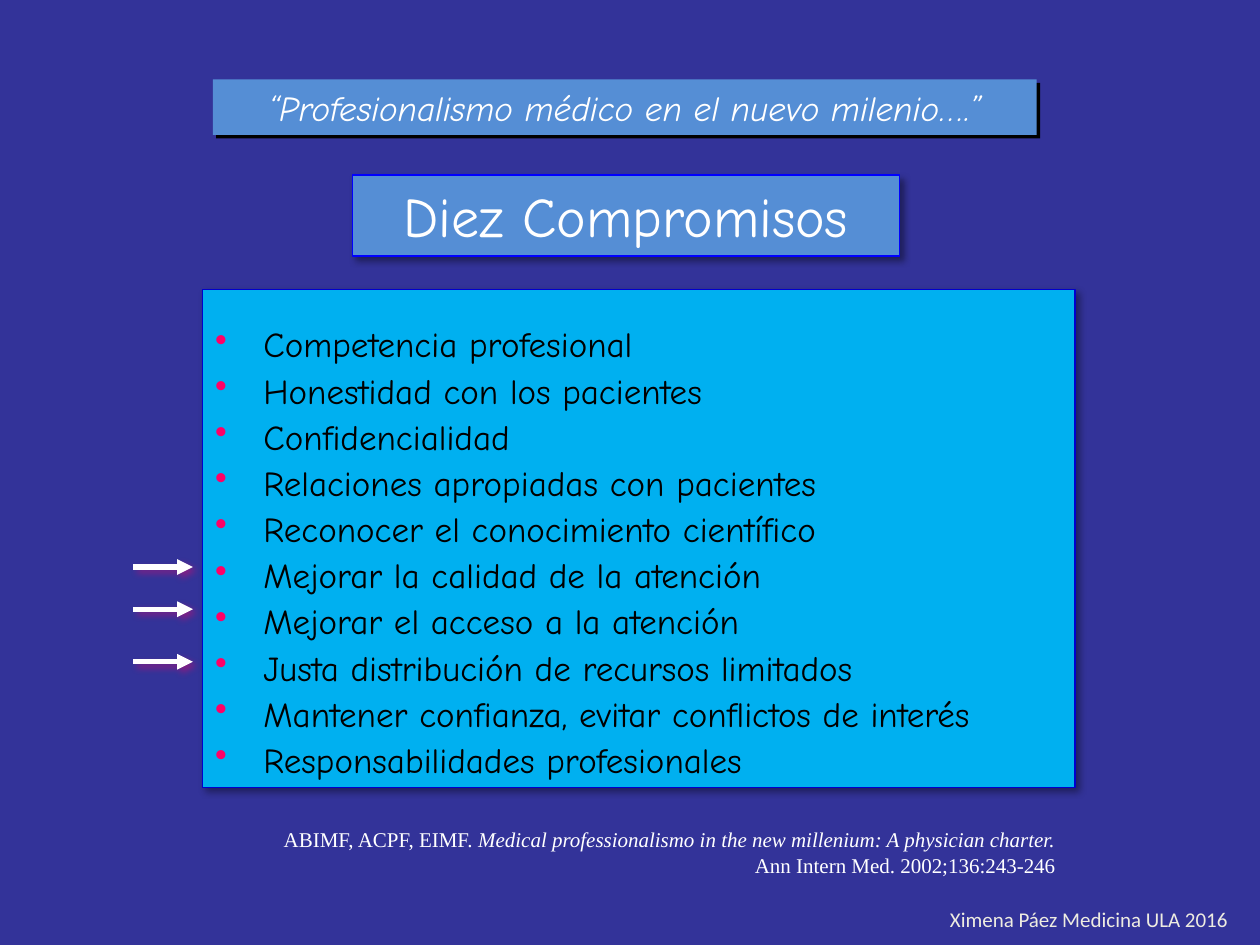
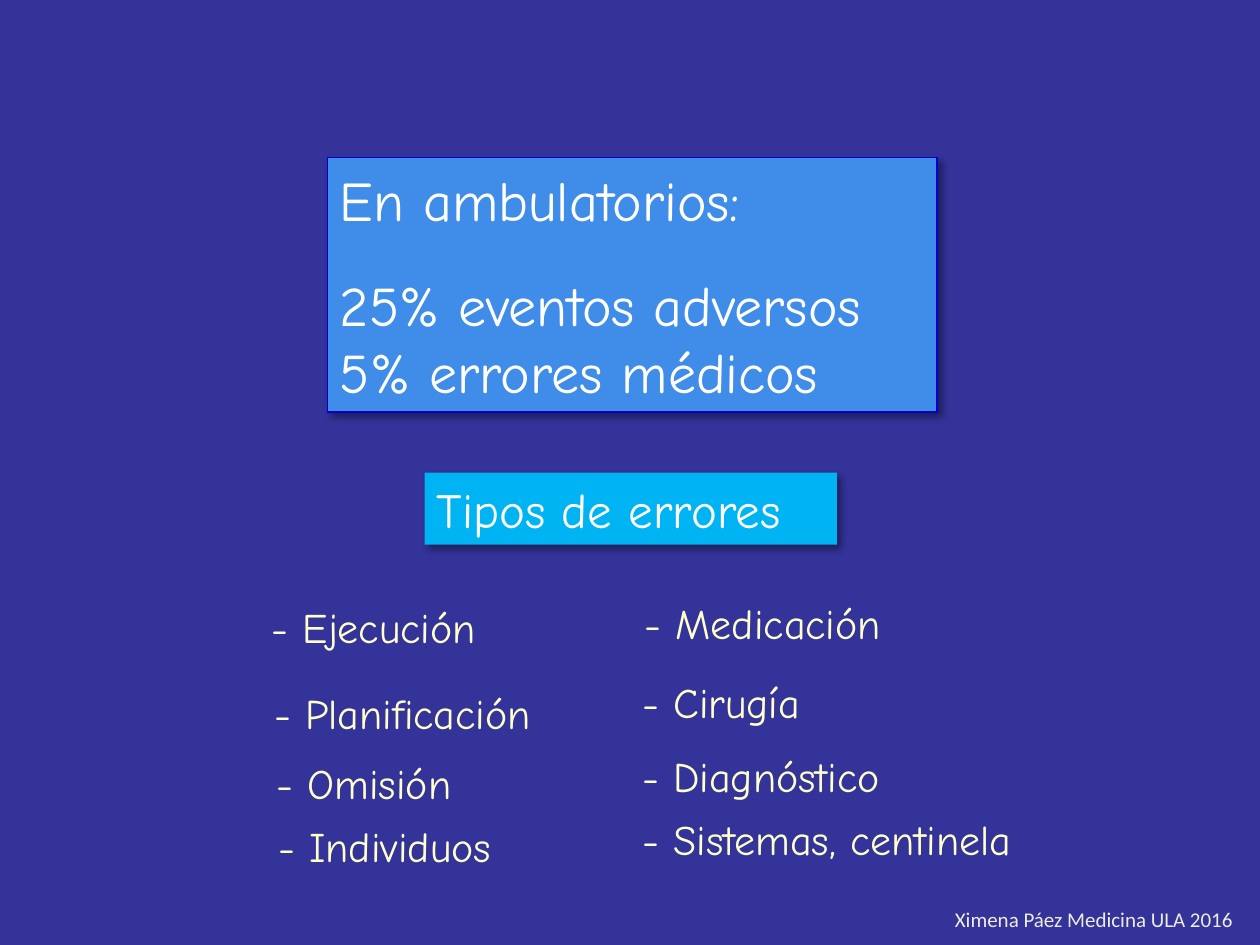
from dataclasses import dataclass
from typing import NamedTuple, Optional

from lxml.etree import SubElement
from pptx import Presentation
from pptx.dml.color import RGBColor
from pptx.enum.shapes import MSO_CONNECTOR as Connector, MSO_SHAPE as Preset
from pptx.enum.text import MSO_AUTO_SIZE as AutoSize, PP_ALIGN as Align
from pptx.oxml.ns import qn
from pptx.util import Cm, Pt

NAVY = RGBColor(0x33, 0x33, 0x99)
STEEL = RGBColor(0x55, 0x8E, 0xD5)
AZURE = RGBColor(0x3F, 0x8C, 0xE9)
CYAN = RGBColor(0x00, 0xB0, 0xF0)
BRIGHT_CYAN = RGBColor(0x00, 0xB3, 0xF2)
DEEP_BLUE = RGBColor(0x00, 0x00, 0xCC)
PURE_BLUE = RGBColor(0x00, 0x00, 0xFF)
PINK = RGBColor(0xFF, 0x00, 0x66)
WHITE = RGBColor(0xFF, 0xFF, 0xFF)
IVORY = RGBColor(0xEE, 0xEC, 0xE1)
CREAM = RGBColor(0xFF, 0xFF, 0xCC)
BLACK = RGBColor(0x00, 0x00, 0x00)

COMIC = "Comic Neue"
BULLET_INDENT = Cm(0.97)


class Shadow(NamedTuple):
    color: RGBColor
    opacity: int
    blur: float
    distance: float


SOFT = Shadow(BLACK, 40, 4, 3)
HARD = Shadow(BLACK, 100, 0, 2.8)
PINK_GLOW = Shadow(PINK, 40, 4, 3)


class Span(NamedTuple):
    text: str
    italic: bool = False


class Para(NamedTuple):
    spans: tuple[Span, ...]
    layout: dict = {}
    bullet: bool = False


@dataclass
class Box:
    left: float
    top: float
    width: float
    height: float
    paras: list[Para]
    size: float
    color: RGBColor = WHITE
    font: str = COMIC
    fill: Optional[RGBColor] = None
    border: Optional[RGBColor] = None
    shadow: Optional[Shadow] = None
    text_shadow: Optional[Shadow] = None
    margin_top: float = 0.13
    wrap: bool = True


def plain(text: str, **layout) -> Para:
    return Para((Span(text),), layout)


def apply_format(target, values: dict) -> None:
    for name, value in values.items():
        setattr(target, name, value)


def fill_effects(effects, shadow: Shadow) -> None:
    """Write an outer shadow, falling to the lower right, into an effect list."""
    outer = SubElement(effects, qn("a:outerShdw"), {
        "blurRad": str(Pt(shadow.blur)), "dist": str(Pt(shadow.distance)),
        "dir": str(45 * 60000), "algn": "tl", "rotWithShape": "0"})
    color = SubElement(outer, qn("a:srgbClr"), val=str(shadow.color))
    SubElement(color, qn("a:alpha"), val=str(shadow.opacity * 1000))


def add_bullet(para) -> None:
    properties = para._p.get_or_add_pPr()
    properties.set("marL", str(BULLET_INDENT))
    properties.set("indent", str(-BULLET_INDENT))
    color = SubElement(properties, qn("a:buClr"))
    SubElement(color, qn("a:srgbClr"), val=str(PINK))
    SubElement(properties, qn("a:buChar"), char="•")


def write_span(para, span: Span, box: Box) -> None:
    run = para.add_run()
    run.text = span.text
    apply_format(run.font, {"name": box.font, "size": Pt(box.size), "italic": span.italic})
    run.font.color.rgb = box.color
    if box.text_shadow:
        properties = run.font._element
        effects = SubElement(properties, qn("a:effectLst"))
        fill_effects(effects, box.text_shadow)
        properties.find(qn("a:solidFill")).addnext(effects)


def draw_box(page, box: Box) -> None:
    place = [Cm(length) for length in (box.left, box.top, box.width, box.height)]
    if box.fill is None:
        shape = page.shapes.add_textbox(*place)
    else:
        shape = page.shapes.add_shape(Preset.RECTANGLE, *place)
        shape.fill.solid()
        shape.fill.fore_color.rgb = box.fill
        if box.border is None:
            shape.line.fill.background()
        else:
            shape.line.color.rgb = box.border
            shape.line.width = Pt(0.75)
        shape.shadow.inherit = False
        if box.shadow:
            fill_effects(shape._element.spPr.find(qn("a:effectLst")), box.shadow)

    frame = shape.text_frame
    apply_format(frame, {
        "word_wrap": box.wrap, "auto_size": AutoSize.SHAPE_TO_FIT_TEXT,
        "margin_left": Cm(0.25), "margin_right": Cm(0.25),
        "margin_top": Cm(box.margin_top), "margin_bottom": Cm(0.13)})
    for index, content in enumerate(box.paras):
        para = frame.add_paragraph() if index else frame.paragraphs[0]
        apply_format(para, {"alignment": Align.LEFT, **content.layout})
        if content.bullet:
            add_bullet(para)
        for span in content.spans:
            write_span(para, span, box)


def draw_arrow(page, top: float) -> None:
    arrow = page.shapes.add_connector(
        Connector.STRAIGHT, Cm(2.69), Cm(top), Cm(3.89), Cm(top))
    arrow.line.color.rgb = WHITE
    arrow.line.width = Pt(3)
    SubElement(arrow.line._get_or_add_ln(), qn("a:tailEnd"), type="triangle")
    fill_effects(SubElement(arrow._element.spPr, qn("a:effectLst")), PINK_GLOW)


def add_page(deck, footer_left: float):
    page = deck.slides.add_slide(deck.slide_layouts[6])
    page.background.fill.solid()
    page.background.fill.fore_color.rgb = NAVY
    draw_box(page, Box(footer_left, 18.14, 6.3, 0.76,
                       [plain("Ximena Páez Medicina ULA 2016")],
                       12, IVORY, "Calibri", wrap=False))
    return page


def build_commitments(deck) -> None:
    commitments = (
        "Competencia profesional",
        "Honestidad con los pacientes",
        "Confidencialidad",
        "Relaciones apropiadas con pacientes",
        "Reconocer el conocimiento científico",
        "Mejorar la calidad de la atención",
        "Mejorar el acceso a la atención",
        "Justa distribución de recursos limitados",
        "Mantener confianza, evitar conflictos de interés",
        "Responsabilidades profesionales",
    )
    quote = Para((Span("“Profesionalismo médico en el nuevo milenio….”", True),),
                 {"alignment": Align.CENTER})
    citation = [
        Para((Span("ABIMF, ACPF, EIMF. "),
              Span("Medical professionalismo in the new millenium: "
                   "A physician charter. ", True)), {"alignment": Align.RIGHT}),
        plain("Ann Intern Med. 2002;136:243-246 ", alignment=Align.RIGHT),
    ]
    page = add_page(deck, 18.9)
    draw_box(page, Box(4.09, 5.84, 17.58, 10.03,
                       [Para((Span(text),), {"line_spacing": 1.1}, True)
                        for text in commitments],
                       20, BLACK, fill=CYAN, border=DEEP_BLUE, shadow=SOFT,
                       margin_top=0.58))
    for top in (11.43, 12.28, 13.34):
        draw_arrow(page, top)
    draw_box(page, Box(7.11, 3.53, 11.02, 1.63,
                       [plain("Diez Compromisos", alignment=Align.CENTER)],
                       32, fill=STEEL, border=PURE_BLUE, shadow=SOFT))
    draw_box(page, Box(5.08, 16.54, 16.56, 1.28, citation, 12, font="Times New Roman"))
    draw_box(page, Box(4.29, 1.6, 16.61, 1.12, [quote], 20, fill=STEEL, shadow=HARD))


def build_errors(deck) -> None:
    error_types = (
        ("Ejecución", 5.23, 11.99, 5.28),
        ("Planificación", 5.28, 13.72, 6.22),
        ("Omisión", 5.33, 15.14, 4.78),
        ("Individuos", 5.36, 16.41, 5.54),
        ("Medicación", 12.75, 11.91, 5.54),
        ("Cirugía", 12.7, 13.51, 4.19),
        ("Diagnóstico", 12.7, 14.99, 6.4),
        ("Sistemas, centinela", 12.7, 16.26, 9.14),
    )
    figures = [
        plain("En ambulatorios:"),
        plain("25% eventos adversos", space_before=Pt(21.5)),
        plain("5% errores médicos"),
    ]
    page = add_page(deck, 19)
    draw_box(page, Box(6.6, 3.18, 12.29, 5.13, figures, 32,
                       fill=AZURE, border=DEEP_BLUE, shadow=SOFT))
    draw_box(page, Box(8.56, 9.53, 8.31, 1.45, [plain("Tipos de errores")], 28,
                       fill=BRIGHT_CYAN, shadow=SOFT))
    for name, left, top, width in error_types:
        draw_box(page, Box(left, top, width, 1.27, [plain(f"- {name}")], 24, CREAM,
                           text_shadow=HARD))


def main() -> None:
    deck = Presentation()
    deck.slide_width, deck.slide_height = Cm(25.4), Cm(19.05)
    build_commitments(deck)
    build_errors(deck)
    deck.save("out.pptx")


if __name__ == "__main__":
    main()
